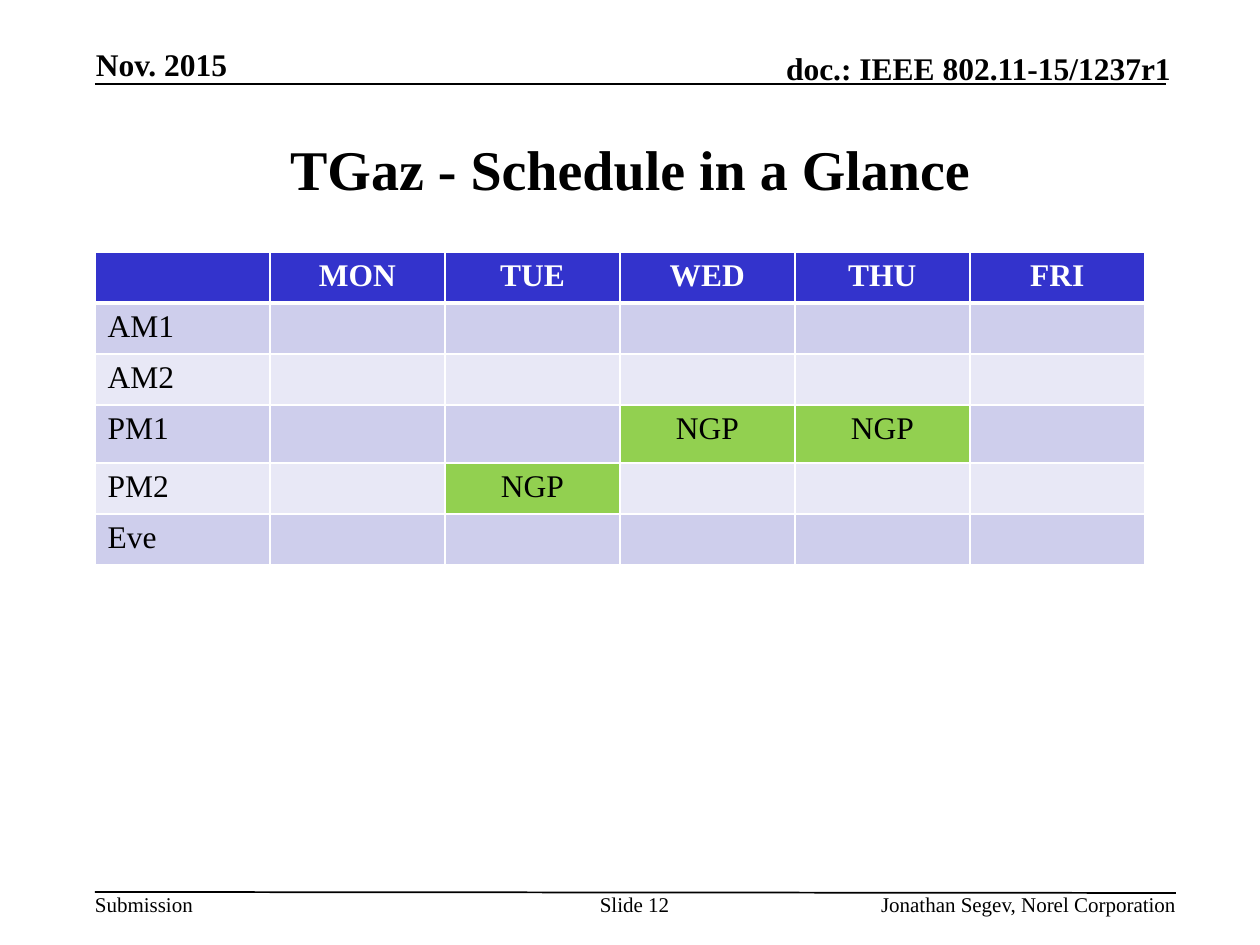
from lxml import etree
from pptx import Presentation
from pptx.dml.color import RGBColor
from pptx.enum.shapes import MSO_CONNECTOR
from pptx.enum.text import MSO_ANCHOR, PP_ALIGN
from pptx.oxml.ns import qn
from pptx.util import Emu, Pt

LEFT, CENTER, RIGHT = PP_ALIGN.LEFT, PP_ALIGN.CENTER, PP_ALIGN.RIGHT
TOP, MIDDLE, BOTTOM = MSO_ANCHOR.TOP, MSO_ANCHOR.MIDDLE, MSO_ANCHOR.BOTTOM
STRAIGHT = MSO_CONNECTOR.STRAIGHT

PX_PER_INCH = 126
FONT = "Times New Roman"
BLACK = RGBColor(0x00, 0x00, 0x00)
WHITE = RGBColor(0xFF, 0xFF, 0xFF)
HEADER_BLUE = RGBColor(0x33, 0x33, 0xCC)
BAND_DARK = RGBColor(0xCE, 0xCE, 0xEC)
BAND_LIGHT = RGBColor(0xE8, 0xE8, 0xF6)
MEETING_GREEN = RGBColor(0x92, 0xD0, 0x50)

DAYS = ["MON", "TUE", "WED", "THU", "FRI"]
SLOTS = ["AM1", "AM2", "PM1", "PM2", "Eve"]
MEETINGS = {("PM1", "WED"): "NGP", ("PM1", "THU"): "NGP", ("PM2", "TUE"): "NGP"}
COL_WIDTH = 175
ROW_HEIGHTS = [51, 51, 51, 58, 51, 51]


def px(n):
    return Emu(round(n * 914400 / PX_PER_INCH))


def add_run(p, text, size, bold=False, color=BLACK):
    r = p.add_run()
    r.text = text
    r.font.name = FONT
    r.font.size = Pt(size)
    r.font.bold = bold
    r.font.color.rgb = color


def add_text(s, text, x, y, w, h, size, align=LEFT, anchor=TOP, bold=False, wrap=True):
    tf = s.shapes.add_textbox(px(x), px(y), px(w), px(h)).text_frame
    tf.margin_left = tf.margin_right = tf.margin_top = tf.margin_bottom = 0
    tf.word_wrap = wrap
    tf.vertical_anchor = anchor
    p = tf.paragraphs[0]
    p.alignment = align
    add_run(p, text, size, bold)


def add_rule(s, x1, y1, x2, y2):
    line = s.shapes.add_connector(STRAIGHT, px(x1), px(y1), px(x2), px(y2))
    line.line.color.rgb = BLACK
    line.line.width = Pt(1)
    etree.SubElement(line._element.spPr, qn("a:effectLst"))


def set_borders(cell, top, bottom):
    """Draw white borders; widths are in points, the sides are always 1."""
    tcPr = cell._tc.get_or_add_tcPr()
    for side, width in (("L", 1), ("R", 1), ("T", top), ("B", bottom)):
        ln = etree.SubElement(tcPr, qn(f"a:ln{side}"), w=str(Pt(width)))
        fill = etree.SubElement(ln, qn("a:solidFill"))
        etree.SubElement(fill, qn("a:srgbClr"), val=str(WHITE))


def fill_cell(cell, text, fill, align, bold=False, color=BLACK, top=1, bottom=1):
    set_borders(cell, top, bottom)
    cell.fill.solid()
    cell.fill.fore_color.rgb = fill
    p = cell.text_frame.paragraphs[0]
    p.alignment = align
    if text:
        add_run(p, text, 18, bold, color)


def add_schedule(s, x, y):
    rows, cols = len(SLOTS) + 1, len(DAYS) + 1
    table = s.shapes.add_table(rows, cols, px(x), px(y),
                               px(COL_WIDTH * cols), px(sum(ROW_HEIGHTS))).table
    for column in table.columns:
        column.width = px(COL_WIDTH)
    for row, height in zip(table.rows, ROW_HEIGHTS):
        row.height = px(height)

    for c, day in enumerate([""] + DAYS):
        fill_cell(table.cell(0, c), day, HEADER_BLUE, CENTER, True, WHITE, bottom=3)
    for r, slot in enumerate(SLOTS, 1):
        band = BAND_DARK if r % 2 else BAND_LIGHT
        top = 3 if r == 1 else 1
        fill_cell(table.cell(r, 0), slot, band, LEFT, top=top)
        for c, day in enumerate(DAYS, 1):
            meeting = MEETINGS.get((slot, day))
            fill = MEETING_GREEN if meeting else band
            fill_cell(table.cell(r, c), meeting, fill, CENTER, top=top)


def main():
    prs = Presentation()
    prs.slide_width, prs.slide_height = px(1260), px(945)
    s = prs.slides.add_slide(prs.slide_layouts[6])

    add_rule(s, 95, 84, 1166, 84)
    add_text(s, "Nov. 2015", 96, 45, 258, 38, 18, anchor=BOTTOM, bold=True)
    add_text(s, "doc.: IEEE 802.11-15/1237r1", 689, 49, 482, 38, 18, RIGHT, BOTTOM, True)

    add_text(s, "TGaz - Schedule in a Glance", 95, 95, 1071, 146, 32, CENTER, MIDDLE, True)
    add_schedule(s, 95, 252)

    add_rule(s, 95, 892, 1176, 893)
    add_text(s, "Submission", 95, 892, 98, 25, 12, wrap=False)
    add_text(s, "Slide 12", 598, 892, 73, 50, 12, CENTER)
    add_text(s, "Jonathan Segev, Norel Corporation", 738, 892, 438, 25, 12, RIGHT)

    prs.save("out.pptx")


if __name__ == "__main__":
    main()
